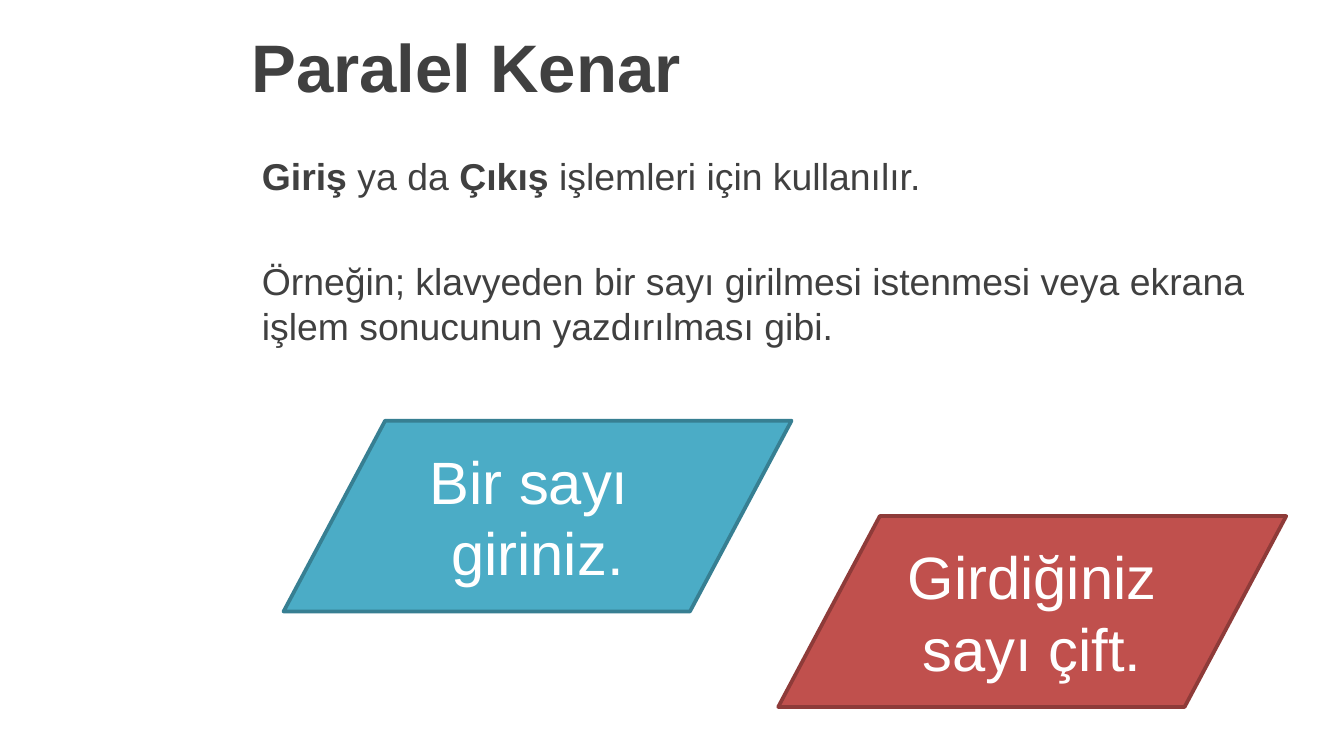
import dataclasses

import pptx
import pptx.dml.color
import pptx.enum.shapes
import pptx.enum.text
import pptx.util

Inches = pptx.util.Inches
Pt = pptx.util.Pt
RGBColor = pptx.dml.color.RGBColor
Align = pptx.enum.text.PP_ALIGN


@dataclasses.dataclass(frozen=True)
class Theme:
    font: str = "Arial"
    text: str = "404040"
    white: str = "FFFFFF"
    input_fill: str = "4BACC6"
    input_line: str = "377F92"
    output_fill: str = "C0504D"
    output_line: str = "8E3B39"
    title_size: int = 36
    body_size: int = 20
    label_size: int = 32
    body_gap: int = 32
    line_width: int = 2


THEME = Theme()


def place(shape, left, top, width, height):
    shape.left, shape.top = Inches(left), Inches(top)
    shape.width, shape.height = Inches(width), Inches(height)


def prepare_frame(text_frame):
    text_frame.word_wrap = True
    text_frame.auto_size = pptx.enum.text.MSO_AUTO_SIZE.NONE
    text_frame.vertical_anchor = pptx.enum.text.MSO_ANCHOR.MIDDLE


def format_paragraph(paragraph, size, color, alignment=Align.LEFT):
    paragraph.alignment = alignment
    for font in [paragraph.font] + [run.font for run in paragraph.runs]:
        font.name = THEME.font
        font.size = Pt(size)
        font.color.rgb = RGBColor.from_string(color)


def set_title(slide, text):
    title = slide.shapes.title
    place(title, 1.77, 0, 8.23, 0.97)
    prepare_frame(title.text_frame)
    title.text_frame.text = text
    paragraph = title.text_frame.paragraphs[0]
    format_paragraph(paragraph, THEME.title_size, THEME.text)
    paragraph.runs[0].font.bold = True


def add_body(slide, opening_parts, example):
    body = slide.shapes.add_textbox(
        Inches(1.85), Inches(1.08), Inches(7.72), Inches(1.57)
    )
    text_frame = body.text_frame
    prepare_frame(text_frame)
    opening = text_frame.paragraphs[0]
    for text, bold in opening_parts:
        run = opening.add_run()
        run.text = text
        run.font.bold = bold
    paragraph = text_frame.add_paragraph()
    paragraph.text = example
    paragraph.space_before = Pt(THEME.body_gap)
    for paragraph in text_frame.paragraphs:
        format_paragraph(paragraph, THEME.body_size, THEME.text)


def add_parallelogram(slide, left, top, text, fill, line):
    shape = slide.shapes.add_shape(
        pptx.enum.shapes.MSO_SHAPE.FLOWCHART_DATA,
        Inches(left), Inches(top), Inches(3.78), Inches(1.42),
    )
    shape.shadow.inherit = False
    shape.fill.solid()
    shape.fill.fore_color.rgb = RGBColor.from_string(fill)
    shape.line.color.rgb = RGBColor.from_string(line)
    shape.line.width = Pt(THEME.line_width)
    prepare_frame(shape.text_frame)
    paragraph = shape.text_frame.paragraphs[0]
    paragraph.text = text
    format_paragraph(paragraph, THEME.label_size, THEME.white, Align.CENTER)


def main():
    presentation = pptx.Presentation()
    presentation.slide_width = Inches(10)
    presentation.slide_height = Inches(10 * 9 / 16)
    slide = presentation.slides.add_slide(presentation.slide_layouts[5])

    set_title(slide, "Paralel Kenar")
    add_body(
        slide,
        [
            ("Giriş", True),
            (" ya da ", False),
            ("Çıkış", True),
            (" işlemleri için kullanılır.", False),
        ],
        "Örneğin; klavyeden bir sayı girilmesi istenmesi veya ekrana \v"
        "işlem sonucunun yazdırılması gibi.",
    )
    add_parallelogram(
        slide, 2.11, 3.13, "Bir sayı \vgiriniz.",
        THEME.input_fill, THEME.input_line,
    )
    add_parallelogram(
        slide, 5.79, 3.84, "Girdiğiniz sayı çift.",
        THEME.output_fill, THEME.output_line,
    )
    presentation.save("out.pptx")


if __name__ == "__main__":
    main()
